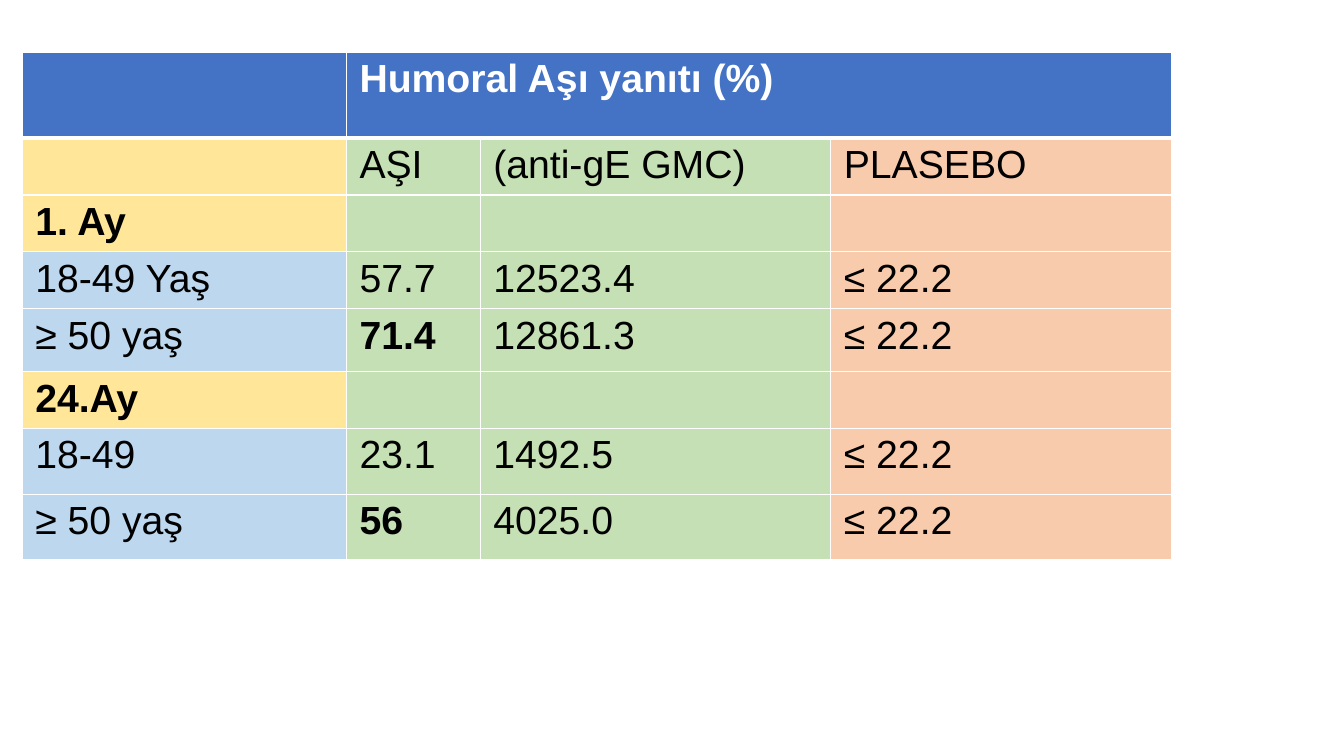
from dataclasses import dataclass

from lxml import etree
from pptx import Presentation
from pptx.dml.color import RGBColor
from pptx.oxml.ns import qn
from pptx.util import Pt


@dataclass(frozen=True)
class Theme:
    font: str = "Arial"
    size: int = 28
    white: str = "FFFFFF"
    black: str = "000000"
    header: str = "4472C4"
    period: str = "FFE699"
    age: str = "BDD7EE"
    vaccine: str = "C5E0B4"
    placebo: str = "F8CBAD"


T = Theme()
LEFT, TOP = 15.84, 37.44
COL_WIDTHS = [231.6, 95.6, 250.4, 243.2]
ROW_HEIGHTS = [61.2, 40.6, 40.6, 40.6, 45, 40.6, 47, 47]
ROWS = [
    ["", "Humoral Aşı yanıtı (%)", "", ""],
    ["", "AŞI", "(anti-gE GMC)", "PLASEBO"],
    ["1. Ay", "", "", ""],
    ["18-49 Yaş", "57.7", "12523.4", "≤ 22.2"],
    ["≥ 50 yaş", "71.4", "12861.3", "≤ 22.2"],
    ["24.Ay", "", "", ""],
    ["18-49", "23.1", "1492.5", "≤ 22.2"],
    ["≥ 50 yaş", "56", "4025.0", "≤ 22.2"],
]
PERIOD_ROWS = (1, 2, 5)
BOLD_CELLS = {(0, 1), (2, 0), (4, 1), (5, 0), (7, 1)}


def add_borders(cell, top, bottom):
    """Give a cell white edges; the sides are 1 pt wide."""
    tc_pr = cell._tc.get_or_add_tcPr()
    edges = [("lnL", 1), ("lnR", 1), ("lnT", top), ("lnB", bottom)]
    for i, (tag, width) in enumerate(edges):
        ln = etree.Element(qn(f"a:{tag}"), w=str(Pt(width)))
        fill = etree.SubElement(ln, qn("a:solidFill"))
        etree.SubElement(fill, qn("a:srgbClr"), val=T.white)
        tc_pr.insert(i, ln)


prs = Presentation()
prs.slide_width, prs.slide_height = Pt(960), Pt(540)
s = prs.slides.add_slide(prs.slide_layouts[6])

table = s.shapes.add_table(
    len(ROWS), len(COL_WIDTHS), Pt(LEFT), Pt(TOP),
    Pt(sum(COL_WIDTHS)), Pt(sum(ROW_HEIGHTS))).table
table.horz_banding = False
for column, width in zip(table.columns, COL_WIDTHS):
    column.width = Pt(width)
for row, height in zip(table.rows, ROW_HEIGHTS):
    row.height = Pt(height)
table.cell(0, 1).merge(table.cell(0, 3))

for r_i, texts in enumerate(ROWS):
    first = T.period if r_i in PERIOD_ROWS else T.age
    fills = [first, T.vaccine, T.vaccine, T.placebo]
    if r_i == 0:
        fills = [T.header] * 4
    for c_i, (text, color) in enumerate(zip(texts, fills)):
        cell = table.cell(r_i, c_i)
        cell.fill.solid()
        cell.fill.fore_color.rgb = RGBColor.from_string(color)
        add_borders(cell, 3 if r_i == 1 else 1, 3 if r_i == 0 else 1)
        cell.margin_left = cell.margin_right = Pt(9.36)
        cell.margin_top = cell.margin_bottom = Pt(3.6)
        if text:
            r = cell.text_frame.paragraphs[0].add_run()
            r.text = text
            r.font.name = T.font
            r.font.size = Pt(T.size)
            r.font.bold = (r_i, c_i) in BOLD_CELLS
            r.font.color.rgb = RGBColor.from_string(T.white if r_i == 0 else T.black)

prs.save("out.pptx")
